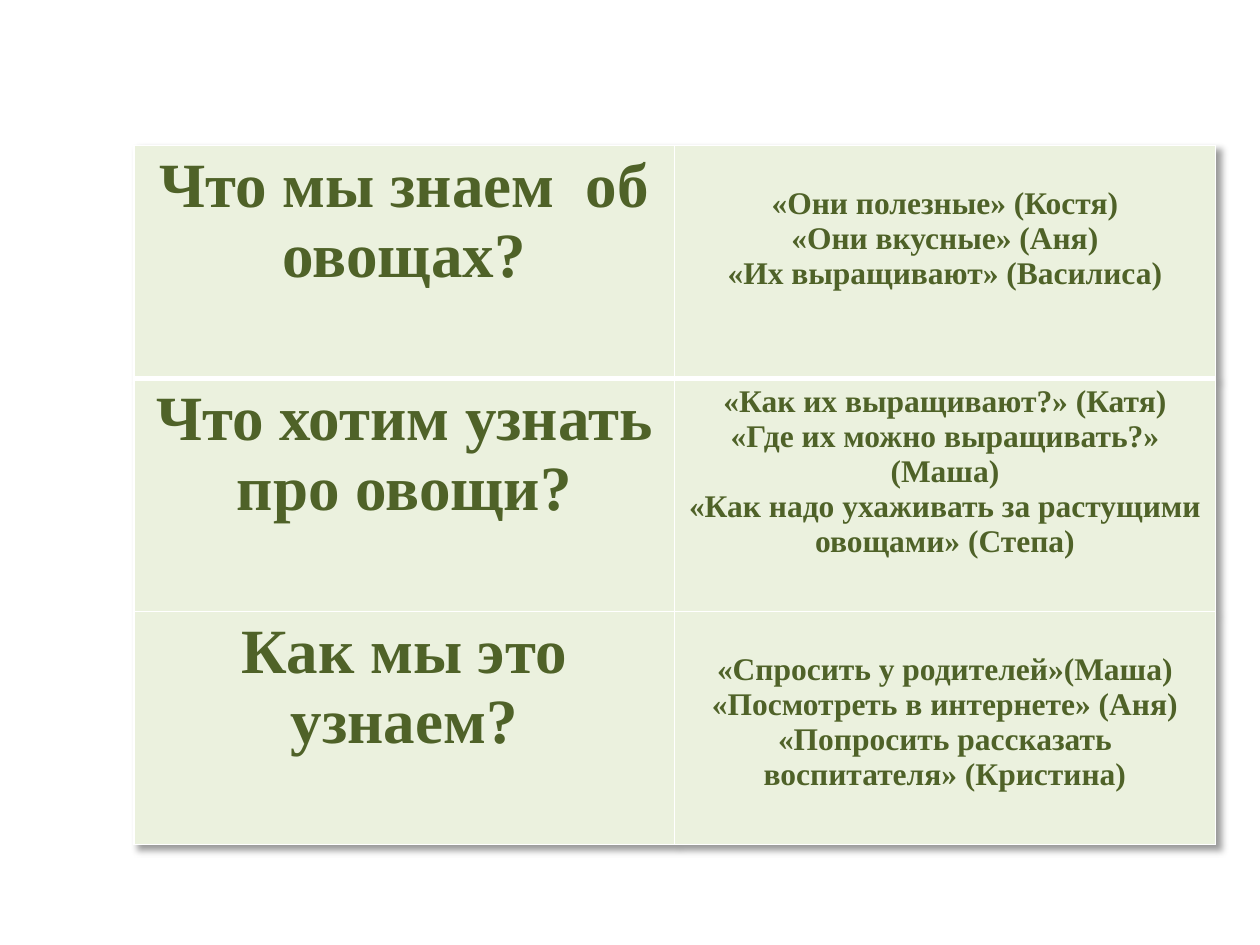
from pptx import Presentation
from pptx.dml.color import RGBColor
from pptx.enum.text import PP_ALIGN
from pptx.oxml import parse_xml
from pptx.oxml.ns import nsdecls
from pptx.util import Pt

DARK_GREEN = RGBColor(0x4F, 0x62, 0x28)
PALE_GREEN = RGBColor(0xEB, 0xF1, 0xDE)
WHITE = RGBColor(0xFF, 0xFF, 0xFF)

FONT = "Times New Roman"
QUESTION_SIZE, ANSWER_SIZE = 36, 18
MARGIN = 3.6
LOWERED = 23.5  # top margin that starts the answers one line lower

# Question, top margin of the answers, answers
ROWS = [
    ("Что мы знаем  об овощах?", LOWERED,
     ["«Они полезные» (Костя)", "«Они вкусные» (Аня)",
      "«Их выращивают» (Василиса)"]),
    ("Что хотим узнать про овощи?", MARGIN,
     ["«Как их выращивают?» (Катя)", "«Где их можно выращивать?» (Маша)",
      "«Как надо ухаживать за растущими овощами» (Степа)"]),
    ("Как мы это узнаем?", LOWERED,
     ["«Спросить у родителей»(Маша)", "«Посмотреть в интернете» (Аня)",
      "«Попросить рассказать воспитателя» (Кристина)"]),
]


class SlideBuilder:
    def __init__(self, slide):
        self.slide = slide

    def table(self, left, top, width, height, rows):
        frame = self.slide.shapes.add_table(
            len(rows), 2, Pt(left), Pt(top), Pt(width), Pt(height))
        table = frame.table
        table.first_row = table.horz_banding = False
        self.shadow(table)
        for i, (question, answer_top, answers) in enumerate(rows):
            # The line under the first row is thicker
            above, below = (3 if i == 1 else 1), (3 if i == 0 else 1)
            for cell in table.rows[i].cells:
                cell.fill.solid()
                cell.fill.fore_color.rgb = PALE_GREEN
                self.borders(cell, L=1, R=1, T=above, B=below)
            self.text(table.cell(i, 0), [question], QUESTION_SIZE, MARGIN)
            self.text(table.cell(i, 1), answers, ANSWER_SIZE, answer_top)

    def text(self, cell, lines, size, top):
        cell.margin_top = Pt(top)
        tf = cell.text_frame
        tf.text = "\n".join(lines)
        for p in tf.paragraphs:
            p.alignment = PP_ALIGN.CENTER
            p.font.name = FONT
            p.font.size = Pt(size)
            p.font.bold = True
            p.font.color.rgb = DARK_GREEN

    def borders(self, cell, **widths):
        tc_pr = cell._tc.get_or_add_tcPr()
        for i, (side, width) in enumerate(widths.items()):
            tc_pr.insert(i, parse_xml(
                f'<a:ln{side} {nsdecls("a")} w="{Pt(width)}"><a:solidFill>'
                f'<a:srgbClr val="{WHITE}"/></a:solidFill></a:ln{side}>'))

    def shadow(self, table):
        table._tbl.tblPr.insert(0, parse_xml(
            f'<a:effectLst {nsdecls("a")}><a:outerShdw blurRad="{Pt(4)}" '
            f'dist="{Pt(4)}" dir="2700000" algn="tl" rotWithShape="0">'
            '<a:srgbClr val="000000"><a:alpha val="40000"/></a:srgbClr>'
            '</a:outerShdw></a:effectLst>'))


def main():
    prs = Presentation()
    prs.slide_width, prs.slide_height = Pt(720), Pt(540)
    builder = SlideBuilder(prs.slides.add_slide(prs.slide_layouts[6]))

    # Questions on the left, children's answers on the right
    builder.table(76.5, 83, 618, 399.6, ROWS)
    prs.save("out.pptx")


if __name__ == "__main__":
    main()
